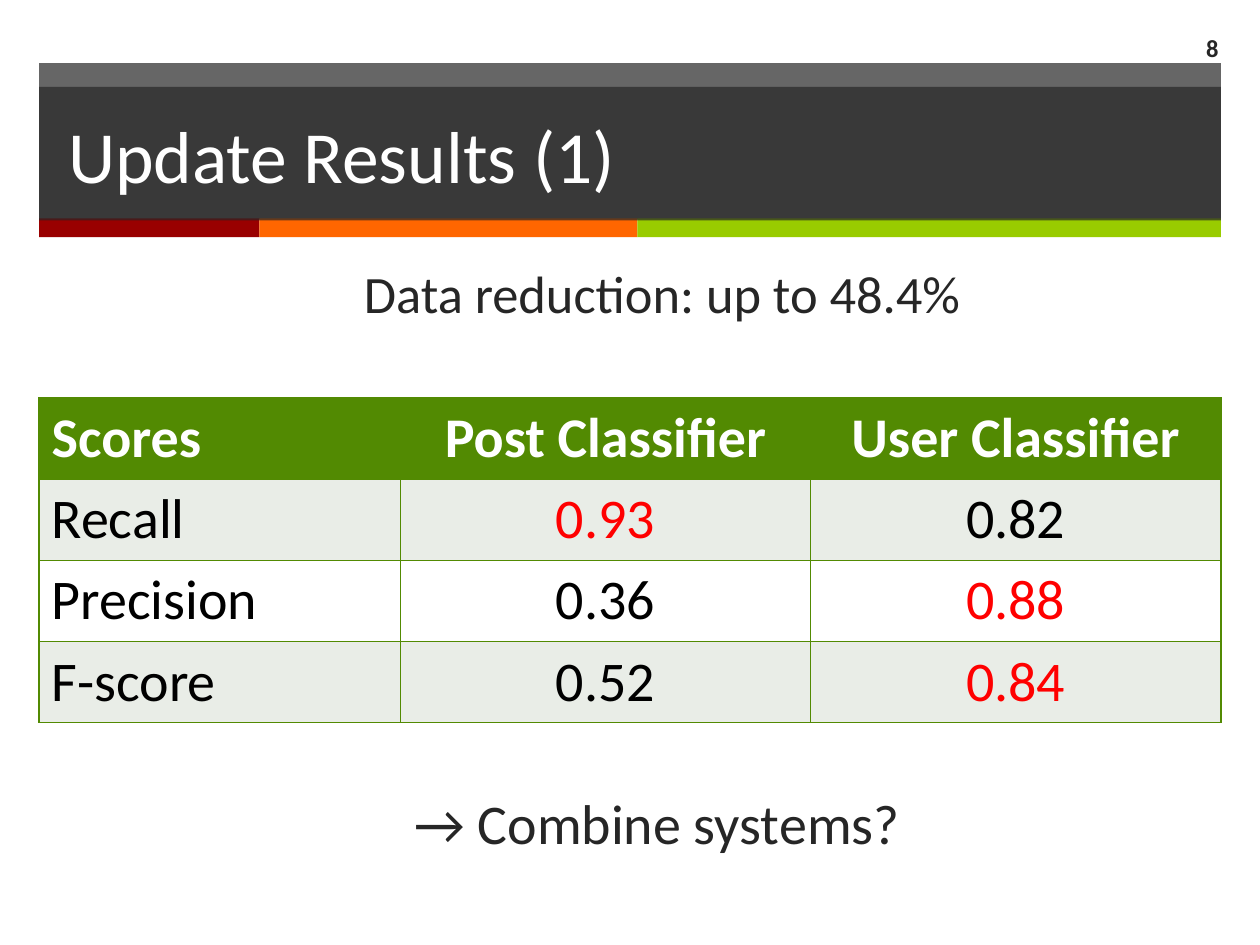
from lxml import etree
from pptx import Presentation
from pptx.dml.color import RGBColor
from pptx.enum.shapes import MSO_SHAPE
from pptx.enum.text import MSO_ANCHOR, PP_ALIGN
from pptx.oxml.ns import qn
from pptx.util import Inches, Pt

RECT = MSO_SHAPE.RECTANGLE
MIDDLE, TOP = MSO_ANCHOR.MIDDLE, MSO_ANCHOR.TOP
LEFT, CENTER, RIGHT = PP_ALIGN.LEFT, PP_ALIGN.CENTER, PP_ALIGN.RIGHT
DARK = RGBColor(0x26, 0x26, 0x26)
WHITE = RGBColor(0xFF, 0xFF, 0xFF)
BLACK = RGBColor(0, 0, 0)
RED = RGBColor(0xFF, 0, 0)
MAROON = RGBColor(0x99, 0, 0)
ORANGE = RGBColor(0xFF, 0x66, 0)
LIME = RGBColor(0x99, 0xCC, 0)
GREEN = RGBColor(0x52, 0x8A, 0x02)
PALE = RGBColor(0xE9, 0xED, 0xE7)

prs = Presentation()
prs.slide_width, prs.slide_height = Inches(10), Inches(7.5)
s = prs.slides.add_slide(prs.slide_layouts[5])
title = s.shapes.title


def area(x, y, w, h):
    pw, ph = prs.slide_width / 100, prs.slide_height / 100
    return int(x * pw), int(y * ph), int(w * pw), int(h * ph)


def add_text(tf, text, size, color, align=LEFT, bold=False):
    p = tf.paragraphs[0]
    p.alignment = align
    r = p.add_run()
    r.text = text
    r.font.name, r.font.size, r.font.bold = "Calibri", Pt(size), bold
    r.font.color.rgb = color
    return p


X, W = 3.1, 93.8
bands = [(X, 6.67, W, 16.53, DARK)]
x = X
for w, color in ((17.5, MAROON), (30, ORANGE), (46.3, LIME)):
    bands.append((x, 23.1, w, 2, color))
    x += w
for *box, color in bands:
    sp = s.shapes.add_shape(RECT, *area(*box))
    sp.shadow.inherit = False
    sp.fill.solid()
    sp.fill.fore_color.rgb = color
    sp.line.fill.background()
    if color == DARK:
        header = sp

s.shapes.element.append(title.element)
title.left, title.top, title.width, title.height = area(X, 9.2, W, 14.13)
title.fill.solid()
title.fill.fore_color.rgb = DARK
tf = title.text_frame
tf.vertical_anchor = MIDDLE
tf.margin_left = Inches(0.23)
add_text(tf, "Update Results (1)", 42, WHITE)
for sp in (header, title):
    clr = sp.element.spPr.find(qn("a:solidFill"))[0]
    etree.SubElement(clr, qn("a:alpha")).set("val", "70000")

rows = [
    ("Scores", "Post Classifier", "User Classifier"),
    ("Recall", "0.93", "0.82"),
    ("Precision", "0.36", "0.88"),
    ("F-score", "0.52", "0.84"),
]
best = {"0.93", "0.88", "0.84"}
table = s.shapes.add_table(4, 3, *area(X, 42.13, W, 34.27)).table
for col, share in zip(table.columns, (28.7, 32.55, 32.55)):
    col.width = int(prs.slide_width * share / 100)
for i, row in enumerate(rows):
    for j, text in enumerate(row):
        cell = table.cell(i, j)
        tcPr = cell._tc.get_or_add_tcPr()
        for side in ("a:lnL", "a:lnR", "a:lnT", "a:lnB"):
            ln = etree.SubElement(tcPr, qn(side), w=str(Pt(1)))
            fill = etree.SubElement(ln, qn("a:solidFill"))
            etree.SubElement(fill, qn("a:srgbClr"), val=str(GREEN))
        cell.fill.solid()
        cell.fill.fore_color.rgb = GREEN if i == 0 else PALE if i % 2 else WHITE
        color = WHITE if i == 0 else RED if text in best else BLACK
        add_text(cell.text_frame, text, 32, color, CENTER if j else LEFT, i == 0)

tf = s.shapes.add_textbox(*area(90.8, 2.4, 6.9, 5.2)).text_frame
tf.word_wrap = True
tf.vertical_anchor = MIDDLE
add_text(tf, "8", 14, DARK, RIGHT, True)

notes = [
    ("→ Combine systems?", 32, (22, 82.8, 56, 13.33), 0.99),
    ("Data reduction: up to 48.4%", 30, (22.9, 26.93, 56, 11.07), 0.5),
]
for text, size, box, indent in notes:
    tf = s.shapes.add_textbox(*area(*box)).text_frame
    tf.word_wrap = True
    tf.vertical_anchor = TOP
    p = add_text(tf, text, size, DARK)
    p.level = 1
    p.space_before = Pt(6)
    pPr = p._p.get_or_add_pPr()
    pPr.set("marL", str(Inches(indent)))
    pPr.set("indent", "0")

prs.save("out.pptx")
